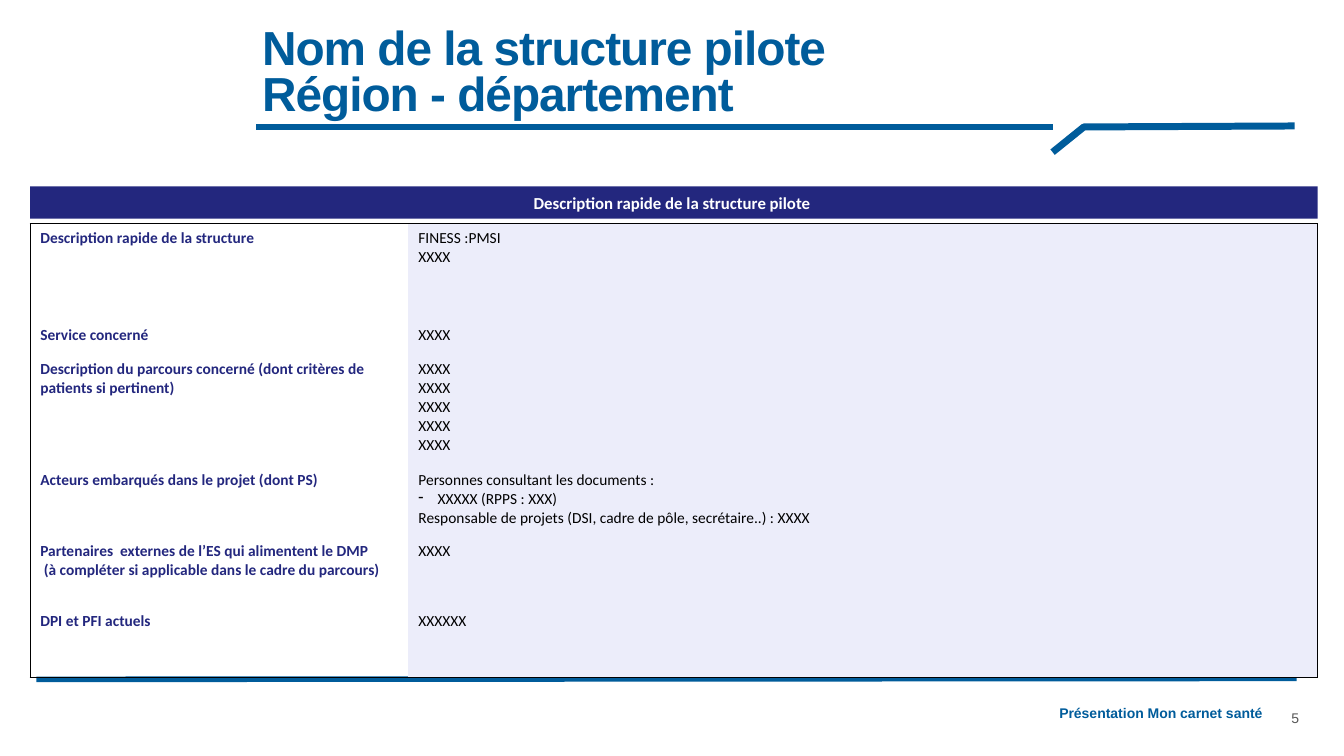
from pptx import Presentation
from pptx.dml.color import RGBColor
from pptx.enum.shapes import MSO_CONNECTOR as Connector, MSO_SHAPE as Preset
from pptx.enum.text import MSO_ANCHOR as Anchor, MSO_AUTO_SIZE as AutoSize, PP_ALIGN as Align
from pptx.oxml import parse_xml
from pptx.oxml.ns import nsdecls, qn
from pptx.util import Inches, Pt
from copy import deepcopy
from lxml.etree import SubElement

BLUE, NAVY, LAVENDER, BLACK, WHITE, GREY = "005C9B", "23277E", "ECEDFA", "000000", "FFFFFF", "575757"
ROWS = [
    (0.96, ["Description rapide de la structure"], ["FINESS :PMSI", "XXXX"]),
    (0.34, ["Service concerné"], ["XXXX"]),
    (1.1, ["Description du parcours concerné (dont critères de patients si pertinent)"], ["XXXX"] * 5),
    (0.7, ["Acteurs embarqués dans le projet (dont PS)"],
     ["Personnes consultant les documents :", "- XXXXX (RPPS : XXX)",
      "Responsable de projets (DSI, cadre de pôle, secrétaire..) : XXXX"]),
    (0.7, ["Partenaires  externes de l’ES qui alimentent le DMP",
           " (à compléter si applicable dans le cadre du parcours)"], ["XXXX"]),
    (0.7, ["DPI et PFI actuels"], ["XXXXXX"]),
]


def color(value):
    return RGBColor.from_string(value)


def write(para, text, size, fill, font="Calibri", bold=False, align=Align.LEFT, tracking=None):
    if text.startswith("- "):
        text = text[2:]
        properties = para._p.get_or_add_pPr()
        properties.set("marL", str(Inches(0.19)))
        properties.set("indent", str(-Inches(0.19)))
        SubElement(properties, qn("a:buChar")).set("char", "-")
    para.text = text
    para.alignment = align
    for span in para.runs:
        span.font.size = Pt(size)
        span.font.name = font
        span.font.bold = bold
        span.font.color.rgb = color(fill)
        if tracking:
            span._r.get_or_add_rPr().set("spc", str(round(tracking * 100)))
    for line_break in para._p.findall(qn("a:br")):
        line_break.append(deepcopy(para.runs[0]._r.rPr))


def set_frame(frame, inset, anchor=Anchor.TOP):
    frame.word_wrap = True
    frame.auto_size = AutoSize.NONE
    frame.vertical_anchor = anchor
    frame.margin_left = frame.margin_right = frame.margin_top = frame.margin_bottom = Inches(inset)


def add_rule(page, start, end, width):
    rule = page.shapes.add_connector(Connector.STRAIGHT, *map(Inches, start + end))
    rule.line.color.rgb = color(BLUE)
    rule.line.width = Pt(width)
    SubElement(rule._element.spPr, qn("a:effectLst"))


def add_title(page, left, top, width, height):
    bottom = top + height
    right = left + 7.9
    add_rule(page, (left, bottom), (right, bottom), 5)
    builder = page.shapes.build_freeform(Inches(right), Inches(bottom + 0.25))
    builder.add_line_segments(
        [(Inches(right + 0.31), Inches(bottom)), (Inches(right + 2.4), Inches(bottom - 0.01))], close=False)
    tail = builder.convert_to_shape()
    tail.shadow.inherit = False
    tail.fill.background()
    tail.line.color.rgb = color(BLUE)
    tail.line.width = Pt(5)

    title = page.shapes.title
    title.left, title.top, title.width, title.height = map(Inches, (left, top, width, height))
    set_frame(title.text_frame, 0.06, Anchor.BOTTOM)
    para = title.text_frame.paragraphs[0]
    write(para, "Nom de la structure pilote \vRégion - département", 34.1, BLUE, "Arial", True, tracking=-0.7)
    para.line_spacing = 0.8


def add_label(page, text, left, top, width, height, inset, **style):
    box = page.shapes.add_textbox(*map(Inches, (left, top, width, height)))
    set_frame(box.text_frame, inset)
    write(box.text_frame.paragraphs[0], text, 10, font="Arial", **style)


def add_footer(page, left, top, width):
    add_rule(page, (left, top), (left + width, top - 0.01), 4)
    add_label(page, "Présentation Mon carnet santé", left + 8.12, top + 0.2, 4.09, 0.35, 0.05,
              fill=BLUE, bold=True, align=Align.RIGHT)
    add_label(page, "5", left + 12.35, top + 0.2, 0.51, 0.26, 0.1, fill=GREY)


def add_banner(page, left, top, width, height):
    banner = page.shapes.add_shape(Preset.RECTANGLE, *map(Inches, (left, top, width, height)))
    banner.shadow.inherit = False
    banner.fill.solid()
    banner.fill.fore_color.rgb = color(NAVY)
    banner.line.fill.background()
    set_frame(banner.text_frame, 0.05, Anchor.MIDDLE)
    write(banner.text_frame.paragraphs[0], "Description rapide de la structure pilote ", 12, WHITE,
          bold=True, align=Align.CENTER)


def set_borders(cell, visible):
    properties = cell._tc.get_or_add_tcPr()
    for side in "LRTB":
        paint = f'<a:solidFill><a:srgbClr val="{BLACK}"/></a:solidFill>' if side in visible else "<a:noFill/>"
        properties.append(parse_xml(f'<a:ln{side} {nsdecls("a")} w="{Pt(1)}">{paint}</a:ln{side}>'))


def fill_cell(cell, lines, sides, ink, background=None, bold=False):
    set_borders(cell, sides)
    if background:
        cell.fill.solid()
        cell.fill.fore_color.rgb = color(background)
    else:
        cell.fill.background()
    frame = cell.text_frame
    for index, text in enumerate(lines):
        para = frame.add_paragraph() if index else frame.paragraphs[0]
        write(para, text, 11, ink, bold=bold)


def add_description(page, left, top, width):
    height = sum(row[0] for row in ROWS)
    table = page.shapes.add_table(len(ROWS), 2, *map(Inches, (left, top, width, height))).table
    table.first_row = table.horz_banding = False
    table.columns[0].width = Inches(3.75)
    table.columns[1].width = Inches(width - 3.75)
    for index, (row_height, labels, values) in enumerate(ROWS):
        table.rows[index].height = Inches(row_height)
        edges = "T" * (index == 0) + "B" * (index == len(ROWS) - 1)
        fill_cell(table.cell(index, 0), labels, edges + "L", NAVY, bold=True)
        fill_cell(table.cell(index, 1), values, edges + "R", BLACK, LAVENDER)


def main():
    deck = Presentation()
    deck.slide_width, deck.slide_height = Inches(13.33), Inches(7.5)
    page = deck.slides.add_slide(deck.slide_layouts[5])
    add_title(page, 2.54, 0.02, 6.81, 1.24)
    add_footer(page, 0.36, 6.74, 12.5)
    add_banner(page, 0.3, 1.85, 12.77, 0.32)
    add_description(page, 0.3, 2.22, 12.77)
    deck.save("out.pptx")


if __name__ == "__main__":
    main()
